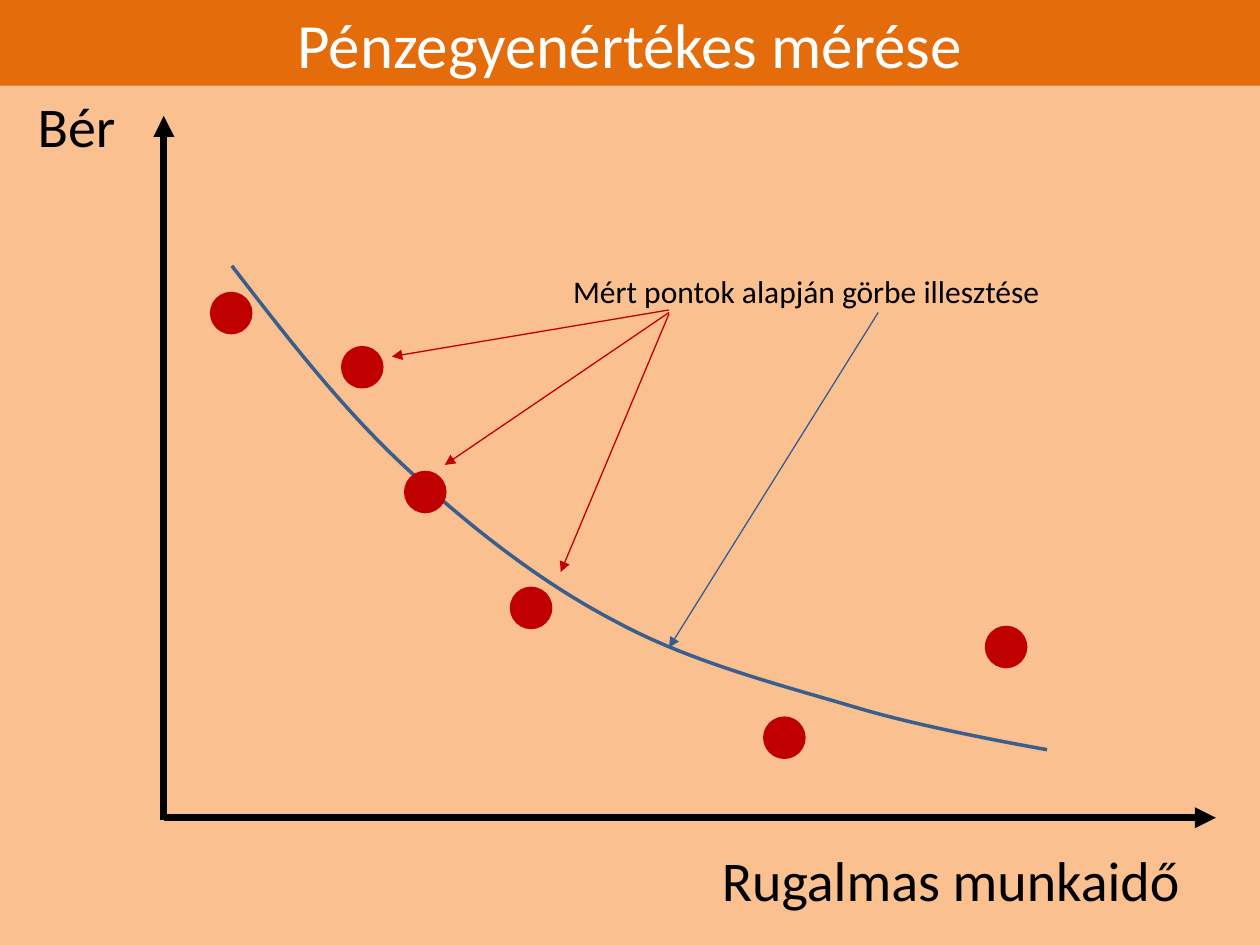
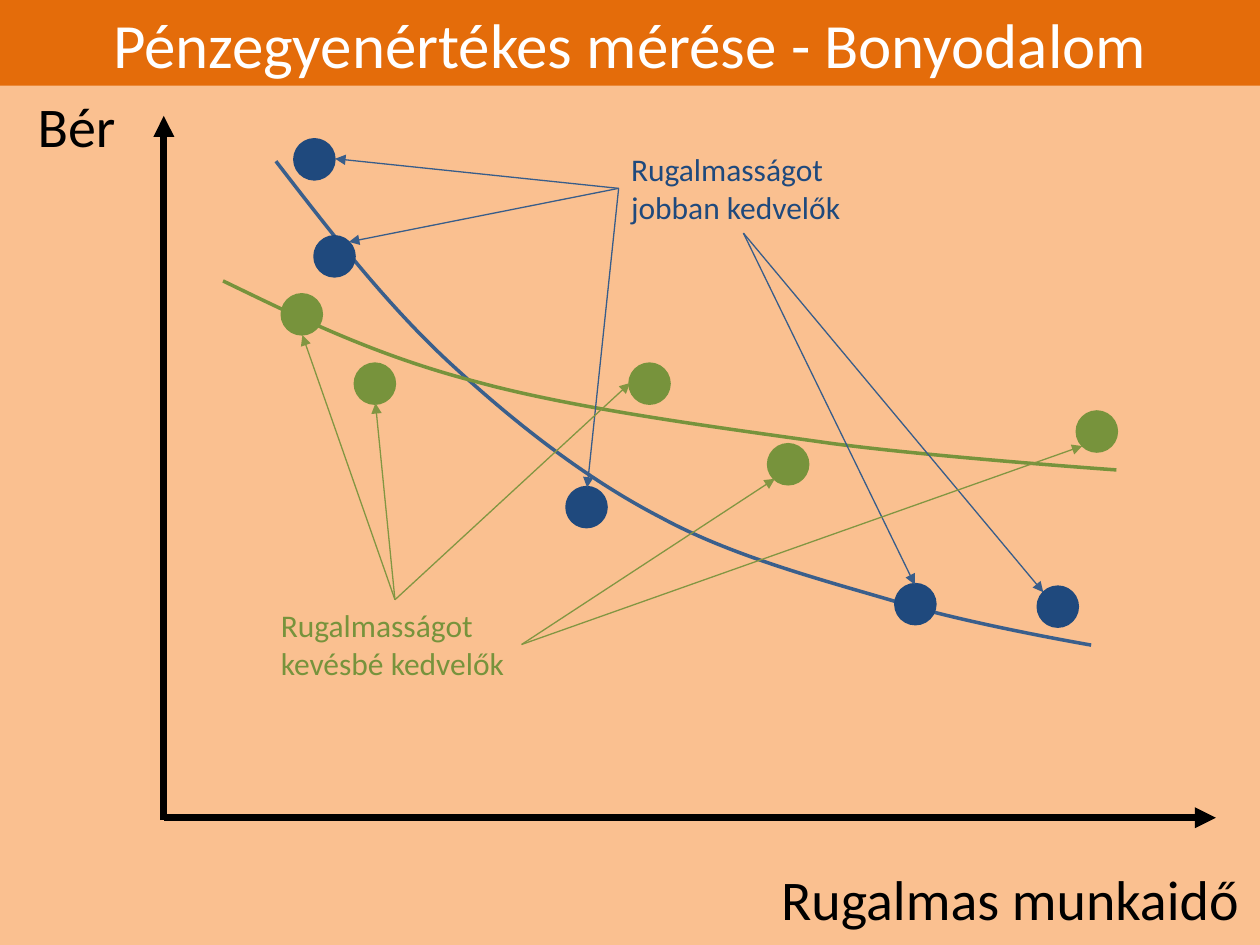
import pptx
import pptx.util
import pptx.dml.color
import pptx.enum.shapes
import pptx.enum.text
import pptx.oxml
import pptx.oxml.ns
import lxml.etree
from collections import namedtuple
from dataclasses import dataclass

Inches = pptx.util.Inches
Pt = pptx.util.Pt
qn = pptx.oxml.ns.qn
Box = namedtuple("Box", "left top width height")
TOP, LEFT, BOTTOM, RIGHT = range(4)


@dataclass(frozen=True)
class Theme:
    font: str = "Calibri"
    background: str = "FAC090"
    band: str = "E46C0A"
    white: str = "FFFFFF"
    black: str = "000000"
    red: str = "C00000"
    navy: str = "1F497D"
    blue_curve: str = "3A5F8C"
    blue_arrow: str = "385D8A"
    green: str = "77933C"
    green_arrow: str = "829642"
    title_size: int = 36
    axis_size: int = 32
    note_size: int = 18
    axis_line: float = 4
    curve_line: float = 2
    arrow_line: float = 0.75
    dot: float = 0.31


THEME = Theme()
BAND = Box(0, 0, 10, 0.68)
PLOT = Box(1.3, 0.92, 8.35, 5.57)

STEEP = [(0, 0), (0.44, 0.57), (0.88, 1.14), (1.39, 1.61), (1.9, 2.08),
         (2.46, 2.52), (3.06, 2.83), (3.65, 3.15), (4.4, 3.34), (4.97, 3.51),
         (5.54, 3.68), (6.47, 3.84), (6.47, 3.84)]
FLAT = [(0, 0), (0.6, 0.29), (1.2, 0.59), (2.01, 0.8), (2.81, 1.02),
        (3.98, 1.17), (4.83, 1.29), (5.67, 1.4), (7.09, 1.5), (7.09, 1.5)]


def rgb(color):
    return pptx.dml.color.RGBColor.from_string(color)


def set_line(shape, color, width):
    shape.line.color.rgb = rgb(color)
    shape.line.width = Pt(width)


def write(shape, text, size, color):
    tf = shape.text_frame
    tf.word_wrap = True
    p = tf.paragraphs[0]
    r = p.add_run()
    r.text = text
    r.font.name = THEME.font
    r.font.size = Pt(size)
    r.font.color.rgb = rgb(color)
    return p


def add_solid(s, kind, box, color):
    sp = s.shapes.add_shape(kind, *map(Inches, box))
    sp.shadow.inherit = False
    sp.fill.solid()
    sp.fill.fore_color.rgb = rgb(color)
    return sp


def add_title(s, box, text):
    sp = add_solid(s, pptx.enum.shapes.MSO_SHAPE.RECTANGLE, box, THEME.band)
    sp.line.fill.background()
    sp.text_frame.vertical_anchor = pptx.enum.text.MSO_ANCHOR.MIDDLE
    p = write(sp, text, THEME.title_size, THEME.white)
    p.alignment = pptx.enum.text.PP_ALIGN.CENTER


def add_label(s, box, at, size, text, points, color):
    sp = s.shapes.add_textbox(Inches(box.left + at[0]), Inches(box.top + at[1]),
                              *map(Inches, size))
    write(sp, text, points, color)
    sp.text_frame.auto_size = pptx.enum.text.MSO_AUTO_SIZE.SHAPE_TO_FIT_TEXT
    return sp


def add_arrow(s, box, start, end, color, width=THEME.arrow_line):
    ends = [Inches(v) for x, y in (start, end) for v in (box.left + x, box.top + y)]
    cxn = s.shapes.add_connector(pptx.enum.shapes.MSO_CONNECTOR.STRAIGHT, *ends)
    set_line(cxn, color, width)
    sp_pr = cxn._element.spPr
    tail = lxml.etree.SubElement(sp_pr.find(qn("a:ln")), qn("a:tailEnd"))
    tail.set("type", "triangle")
    lxml.etree.SubElement(sp_pr, qn("a:effectLst"))
    return cxn


def add_fan(s, box, label, side, targets, color):
    for target in targets:
        cxn = add_arrow(s, box, (0, 0), target, color)
        cxn.begin_connect(label, side)


def add_dots(s, box, corners, color):
    for x, y in corners:
        dot = Box(box.left + x, box.top + y, THEME.dot, THEME.dot)
        sp = add_solid(s, pptx.enum.shapes.MSO_SHAPE.OVAL, dot, color)
        set_line(sp, color, THEME.curve_line)


def bend(sp):
    outline = next(sp._element.iter(qn("a:path")))
    segments = outline.findall(qn("a:lnTo"))
    for i in range(0, len(segments), 3):
        curve = lxml.etree.SubElement(outline, qn("a:cubicBezTo"))
        for segment in segments[i:i + 3]:
            curve.append(segment[0])
            outline.remove(segment)


def add_curve(s, box, at, controls, color):
    points = [(Inches(box.left + at[0] + x), Inches(box.top + at[1] + y))
              for x, y in controls]
    builder = s.shapes.build_freeform(*points[0], scale=1.0)
    builder.add_line_segments(points[1:], close=False)
    sp = builder.convert_to_shape()
    bend(sp)
    sp.shadow.inherit = False
    sp.fill.background()
    set_line(sp, color, THEME.curve_line)


def add_axes(s, box, x_label_at):
    add_arrow(s, box, (0, box.height), (box.width, box.height),
              THEME.black, THEME.axis_line)
    add_arrow(s, box, (0, box.height + 0.02), (0, 0), THEME.black, THEME.axis_line)
    add_label(s, box, (-1.1, -0.24), (1.42, 0.64), "Bér",
              THEME.axis_size, THEME.black)
    add_label(s, box, x_label_at, (4.41, 0.64), "Rugalmas munkaidő",
              THEME.axis_size, THEME.black)


def add_single_fit(s, box):
    add_curve(s, box, (0.54, 1.19), STEEP, THEME.blue_curve)
    add_dots(s, box, [(4.77, 4.78), (0.38, 1.41), (1.42, 1.84),
                      (6.53, 4.06), (2.76, 3.75), (1.92, 2.83)], THEME.red)
    add_label(s, box, (3.15, 1.19), (4.56, 0.4),
              "Mért pontok alapján görbe illesztése", THEME.note_size, THEME.black)
    for start, end in [((4.01, 1.54), (1.81, 1.91)),
                       ((4.01, 1.56), (2.23, 2.77)),
                       ((4.01, 1.57), (3.15, 3.62))]:
        add_arrow(s, box, start, end, THEME.red)
    add_arrow(s, box, (5.67, 1.56), (4.01, 4.22), THEME.blue_arrow)


def add_two_groups(s, box):
    add_curve(s, box, (0.89, 0.36), STEEP, THEME.blue_curve)
    add_curve(s, box, (0.47, 1.31), FLAT, THEME.green)
    add_dots(s, box, [(0.94, 1.42), (3.7, 1.97), (4.8, 2.61),
                      (1.52, 1.97), (7.25, 2.35)], THEME.green)
    add_dots(s, box, [(5.81, 3.72), (3.2, 2.95), (1.2, 0.96),
                      (6.94, 3.74), (1.04, 0.19)], THEME.navy)
    less = add_label(s, box, (0.83, 3.84), (2.01, 0.71),
                     "Rugalmasságot kevésbé kedvelők", THEME.note_size, THEME.green)
    more = add_label(s, box, (3.61, 0.22), (1.98, 0.71),
                     "Rugalmasságot jobban kedvelők", THEME.note_size, THEME.navy)
    add_fan(s, box, more, LEFT, [(1.36, 0.34), (1.47, 1), (3.36, 2.95)],
            THEME.blue_arrow)
    add_fan(s, box, more, BOTTOM, [(5.96, 3.72), (6.98, 3.78)], THEME.blue_arrow)
    add_fan(s, box, less, TOP, [(1.68, 2.28), (3.7, 2.12), (1.1, 1.74)],
            THEME.green_arrow)
    add_fan(s, box, less, RIGHT, [(4.85, 2.88), (7.29, 2.62)], THEME.green_arrow)


def add_plot_slide(prs, title, x_label_at, add_content):
    s = prs.slides.add_slide(prs.slide_layouts[6])
    s.background.fill.solid()
    s.background.fill.fore_color.rgb = rgb(THEME.background)
    add_title(s, BAND, title)
    add_axes(s, PLOT, x_label_at)
    add_content(s, PLOT)


def main():
    prs = pptx.Presentation()
    prs.slide_width = Inches(10)
    prs.slide_height = Inches(7.5)
    add_plot_slide(prs, "Pénzegyenértékes mérése", (4.33, 5.74), add_single_fit)
    add_plot_slide(prs, "Pénzegyenértékes mérése - Bonyodalom", (4.8, 5.89),
                   add_two_groups)
    prs.save("out.pptx")


if __name__ == "__main__":
    main()
